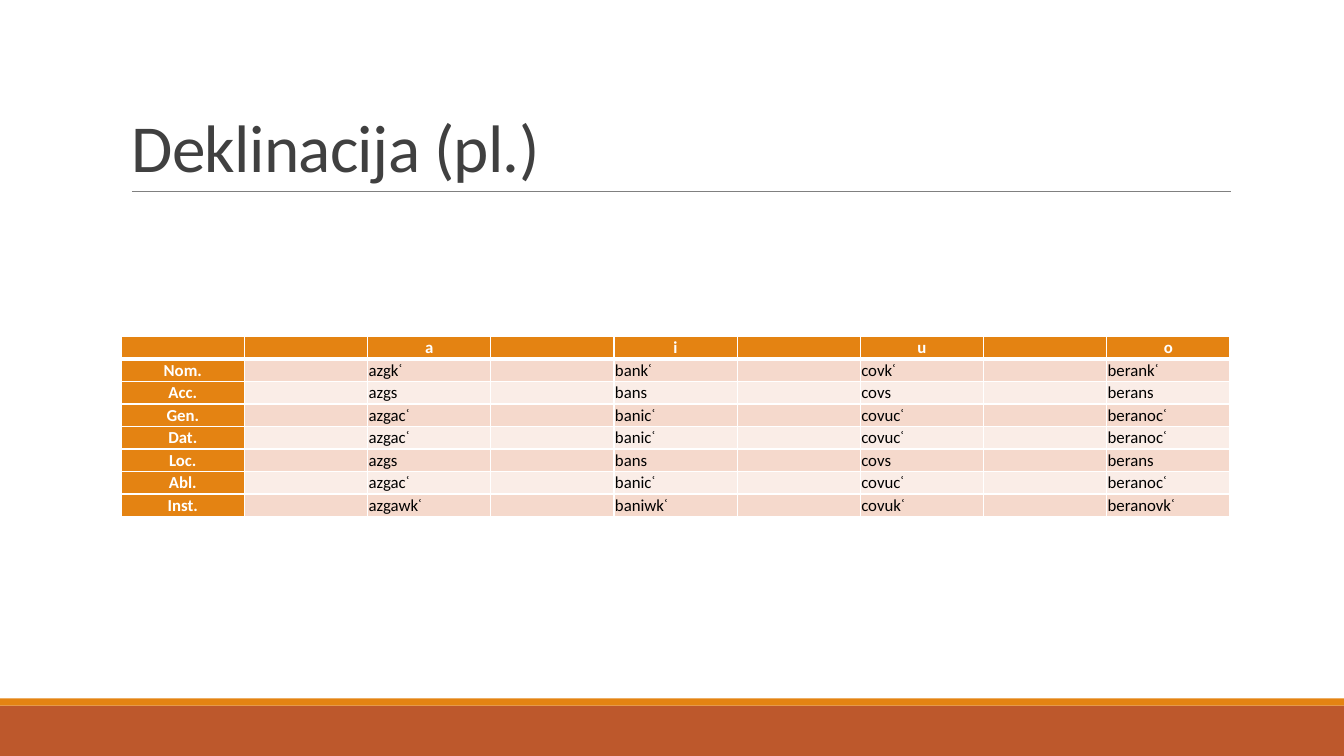
from dataclasses import dataclass
from typing import Any

from lxml import etree
from pptx import Presentation
from pptx import util as u
from pptx.dml.color import RGBColor
from pptx.enum import shapes, text
from pptx.oxml.ns import qn


@dataclass(frozen=True)
class Theme:
    font: str = "Calibri"
    title_size: float = 48
    cell_size: float = 12
    title: str = "404040"
    rule: str = "808080"
    orange: str = "E48312"
    rust: str = "BD582C"
    bands: tuple[str, str] = ("F5D9CC", "FAEDE7")
    white: str = "FFFFFF"
    black: str = "000000"


@dataclass(frozen=True)
class Bar:
    top: float
    height: float
    color: str


@dataclass(frozen=True)
class CellStyle:
    fill: str
    color: str
    bold: bool
    align: Any
    top_line: float = 1
    bottom_line: float = 1


THEME = Theme()
WIDTH, HEIGHT = 960, 540
BARS = (Bar(504, 36, THEME.rust), Bar(498.8, 5.2, THEME.orange))

TABLE_LEFT, TABLE_TOP = 86.6, 240.4
COLUMN_WIDTH, ROW_HEIGHT = 88, 16.1
CELL_MARGIN = 0.72
STEMS = ("a", "i", "u", "o")
CASES = {
    "Nom.": ("azgkʿ", "bankʿ", "covkʿ", "berankʿ"),
    "Acc.": ("azgs", "bans", "covs", "berans"),
    "Gen.": ("azgacʿ", "banicʿ", "covucʿ", "beranocʿ"),
    "Dat.": ("azgacʿ", "banicʿ", "covucʿ", "beranocʿ"),
    "Loc.": ("azgs", "bans", "covs", "berans"),
    "Abl.": ("azgacʿ", "banicʿ", "covucʿ", "beranocʿ"),
    "Inst.": ("azgawkʿ", "baniwkʿ", "covukʿ", "beranovkʿ"),
}


def rgb(color: str) -> RGBColor:
    return RGBColor.from_string(color)


def apply(target: Any, values: dict[str, Any]) -> None:
    for name, value in values.items():
        setattr(target, name, value)


def add_span(para: Any, words: str, size: float, color: str, bold: bool = False) -> Any:
    span = para.add_run()
    span.text = words
    apply(span.font, {"name": THEME.font, "size": u.Pt(size), "bold": bold})
    span.font.color.rgb = rgb(color)
    return span


def add_bar(page: Any, bar: Bar) -> None:
    box = page.shapes.add_shape(
        shapes.MSO_SHAPE.RECTANGLE, 0, u.Pt(bar.top), u.Pt(WIDTH), u.Pt(bar.height)
    )
    box.shadow.inherit = False
    box.fill.solid()
    box.fill.fore_color.rgb = rgb(bar.color)
    box.line.fill.background()


def add_title(page: Any, words: str) -> None:
    box = page.shapes.add_textbox(u.Pt(87), u.Pt(22.3), u.Pt(792), u.Pt(114.5))
    apply(box.text_frame, {"word_wrap": True, "vertical_anchor": text.MSO_ANCHOR.BOTTOM})
    para = box.text_frame.paragraphs[0]
    para.line_spacing = 0.85
    span = add_span(para, words, THEME.title_size, THEME.title)
    span.font._element.set("spc", "-50")


def add_rule(page: Any) -> None:
    rule = page.shapes.add_connector(
        shapes.MSO_CONNECTOR.STRAIGHT, u.Pt(94.3), u.Pt(136.8), u.Pt(879), u.Pt(136.8)
    )
    rule.line.width = u.Pt(0.5)
    rule.line.color.rgb = rgb(THEME.rule)
    etree.SubElement(rule._element.spPr, qn("a:effectLst"))


def add_borders(cell: Any, style: CellStyle) -> None:
    """Add the side lines; call before filling, since lines precede fill in the XML."""
    properties = cell._tc.get_or_add_tcPr()
    widths = {"L": 1, "R": 1, "T": style.top_line, "B": style.bottom_line}
    for side, width in widths.items():
        line = etree.SubElement(properties, qn(f"a:ln{side}"), w=str(u.Pt(width)))
        fill = etree.SubElement(line, qn("a:solidFill"))
        etree.SubElement(fill, qn("a:srgbClr"), val=THEME.white)


def fill_cell(cell: Any, words: str, style: CellStyle) -> None:
    add_borders(cell, style)
    cell.fill.solid()
    cell.fill.fore_color.rgb = rgb(style.fill)
    sides = ("left", "top", "right", "bottom")
    apply(cell, {f"margin_{side}": u.Pt(CELL_MARGIN) for side in sides})
    para = cell.text_frame.paragraphs[0]
    para.alignment = style.align
    if words:
        add_span(para, words, THEME.cell_size, style.color, style.bold)
    else:
        size = str(round(THEME.cell_size * 100))
        etree.SubElement(para._p, qn("a:endParaRPr"), sz=size)


def cell_style(row: int, column: int) -> CellStyle:
    center = text.PP_ALIGN.CENTER
    top_line = 3 if row == 1 else 1
    if row == 0:
        return CellStyle(THEME.orange, THEME.white, True, center, bottom_line=3)
    if column == 0:
        return CellStyle(THEME.orange, THEME.white, True, center, top_line)
    band = THEME.bands[(row - 1) % 2]
    return CellStyle(band, THEME.black, False, text.PP_ALIGN.LEFT, top_line)


def spread(label: str, forms: tuple[str, ...]) -> list[str]:
    """Put an empty column before each form."""
    return [label] + [words for form in forms for words in ("", form)]


def add_declension(page: Any) -> None:
    rows = [spread("", STEMS)] + [spread(case, forms) for case, forms in CASES.items()]
    columns = len(rows[0])
    table = page.shapes.add_table(
        len(rows), columns, u.Pt(TABLE_LEFT), u.Pt(TABLE_TOP),
        u.Pt(columns * COLUMN_WIDTH), u.Pt(len(rows) * ROW_HEIGHT),
    ).table
    for column in table.columns:
        column.width = u.Pt(COLUMN_WIDTH)
    for row, entries in enumerate(rows):
        table.rows[row].height = u.Pt(ROW_HEIGHT)
        for column, words in enumerate(entries):
            fill_cell(table.cell(row, column), words, cell_style(row, column))


def main() -> None:
    deck = Presentation()
    apply(deck, {"slide_width": u.Pt(WIDTH), "slide_height": u.Pt(HEIGHT)})
    page = deck.slides.add_slide(deck.slide_layouts[6])
    for bar in BARS:
        add_bar(page, bar)
    add_rule(page)
    add_title(page, "Deklinacija (pl.)")
    add_declension(page)
    deck.save("out.pptx")


if __name__ == "__main__":
    main()
